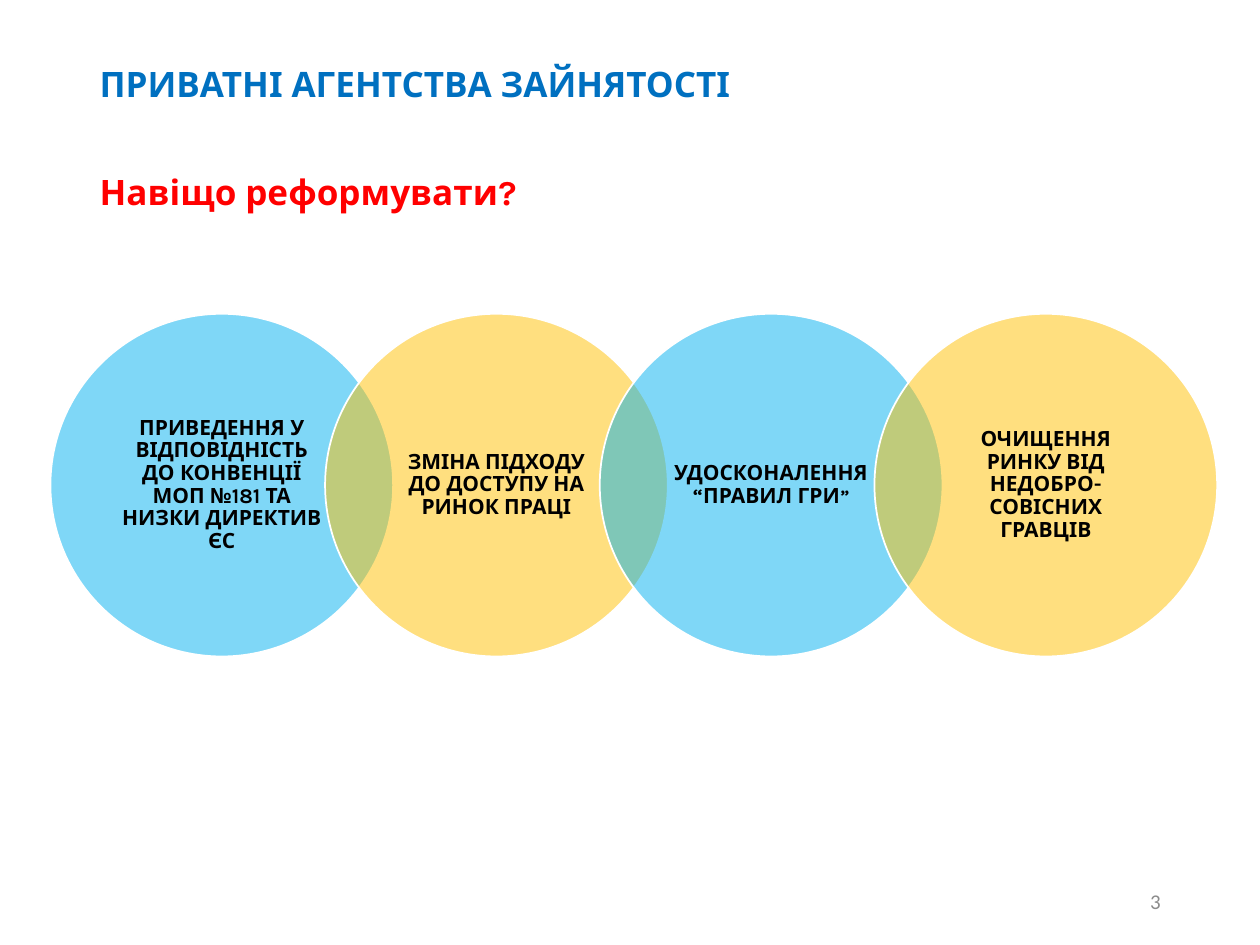
import dataclasses

import lxml.etree
import pptx
import pptx.dml.color
import pptx.enum.shapes
import pptx.enum.text
import pptx.oxml.ns
import pptx.util

Inches = pptx.util.Inches
Pt = pptx.util.Pt
qn = pptx.oxml.ns.qn
ALIGN = pptx.enum.text.PP_ALIGN
MIDDLE = pptx.enum.text.MSO_ANCHOR.MIDDLE


@dataclasses.dataclass(frozen=True)
class Theme:
    """Fonts, sizes and colours of the slide."""
    heading_font: str = "Karla"
    number_font: str = "Calibri"
    heading_size: int = 20
    circle_size: int = 12
    quote_size: int = 11
    number_size: int = 12
    title: str = "0070C0"
    question: str = "FF0000"
    text: str = "000000"
    number: str = "8C8C8C"
    outline: str = "FFFFFF"
    circles: tuple = ("00B0F0", "FFC000")
    opacity: int = 50


THEME = Theme()
REASONS = (
    ("ПРИВЕДЕННЯ У ВІДПОВІДНІСТЬ ДО КОНВЕНЦІЇ МОП №181 ТА НИЗКИ ДИРЕКТИВ ЄС",),
    ("ЗМІНА ПІДХОДУ ДО ДОСТУПУ НА РИНОК ПРАЦІ",),
    ("УДОСКОНАЛЕННЯ “ПРАВИЛ ГРИ", "”"),
    ("ОЧИЩЕННЯ РИНКУ ВІД НЕДОБРО-СОВІСНИХ ГРАВЦІВ",),
)


def rgb(value):
    """Turn a hex string into a colour."""
    return pptx.dml.color.RGBColor.from_string(value)


def style_font(font, name, size, color, bold=True):
    """Set the typeface, size, colour and weight of a font."""
    font.name = name
    font.size = Pt(size)
    font.bold = bold
    font.color.rgb = rgb(color)


def place(shape, box):
    """Move a shape to a box of left, top, width and height."""
    shape.left, shape.top, shape.width, shape.height = map(Inches, box)


def fill_heading(holder, box, text, color):
    """Place a placeholder and write one coloured heading line in it."""
    place(holder, box)
    frame = holder.text_frame
    frame.auto_size = pptx.enum.text.MSO_AUTO_SIZE.NONE
    frame.text = text
    para = frame.paragraphs[0]
    para.line_spacing = 0.9
    para.space_before = Pt(0)
    style_font(para.runs[0].font, THEME.heading_font, THEME.heading_size, color)
    return para


def add_title(page, box):
    """Write the slide title."""
    para = fill_heading(page.shapes.title, box, "ПРИВАТНІ АГЕНТСТВА ЗАЙНЯТОСТІ", THEME.title)
    para.alignment = ALIGN.JUSTIFY
    page.shapes.title.text_frame.vertical_anchor = MIDDLE


def add_question(page, box):
    """Write the question in the body placeholder without a bullet."""
    para = fill_heading(page.placeholders[1], box, "Навіщо реформувати?", THEME.question)
    properties = para._p.get_or_add_pPr()
    properties.set("marL", str(Inches(0.25)))
    properties.set("indent", str(Inches(-0.25)))
    lxml.etree.SubElement(properties, qn("a:buNone"))


def add_circle(page, box, color, phrases):
    """Draw one translucent circle holding a reason."""
    circle = page.shapes.add_shape(
        pptx.enum.shapes.MSO_SHAPE.OVAL, *map(Inches, box))
    circle.shadow.inherit = False
    circle.fill.solid()
    circle.fill.fore_color.rgb = rgb(color)
    tint = circle._element.spPr.find(qn("a:solidFill"))[0]
    lxml.etree.SubElement(tint, qn("a:alpha")).set("val", str(THEME.opacity * 1000))
    circle.line.color.rgb = rgb(THEME.outline)
    circle.line.width = Pt(1)
    frame = circle.text_frame
    frame.word_wrap = True
    frame.vertical_anchor = MIDDLE
    frame.margin_left = frame.margin_right = Inches(0.15)
    frame.margin_top = frame.margin_bottom = Inches(0.02)
    para = frame.paragraphs[0]
    para.alignment = ALIGN.CENTER
    para.line_spacing = 0.9
    for phrase, size in zip(phrases, (THEME.circle_size, THEME.quote_size)):
        span = para.add_run()
        span.text = phrase
        style_font(span.font, THEME.heading_font, size, THEME.text)


def add_circle_chain(page, box):
    """Spread overlapping circles evenly across the box."""
    left, top, width, diameter = box
    step = (width - diameter) / (len(REASONS) - 1)
    for index, phrases in enumerate(REASONS):
        color = THEME.circles[index % len(THEME.circles)]
        add_circle(page, (left + index * step, top, diameter, diameter), color, phrases)


def add_page_number(page, box):
    """Write the slide number."""
    frame = page.shapes.add_textbox(*map(Inches, box)).text_frame
    frame.word_wrap = True
    frame.vertical_anchor = MIDDLE
    frame.text = "3"
    para = frame.paragraphs[0]
    para.alignment = ALIGN.RIGHT
    style_font(para.runs[0].font, THEME.number_font, THEME.number_size, THEME.number, False)


def main():
    """Build and save the slide."""
    deck = pptx.Presentation()
    deck.slide_width, deck.slide_height = Inches(10), Inches(7.5)
    page = deck.slides.add_slide(deck.slide_layouts[1])
    add_title(page, (0.69, 0.4, 8.54, 0.56))
    add_question(page, (0.69, 1.34, 8.62, 5.41))
    add_circle_chain(page, (0.4, 2.49, 9.26, 2.72))
    add_page_number(page, (7.06, 6.95, 2.25, 0.4))
    deck.save("out.pptx")


if __name__ == "__main__":
    main()
